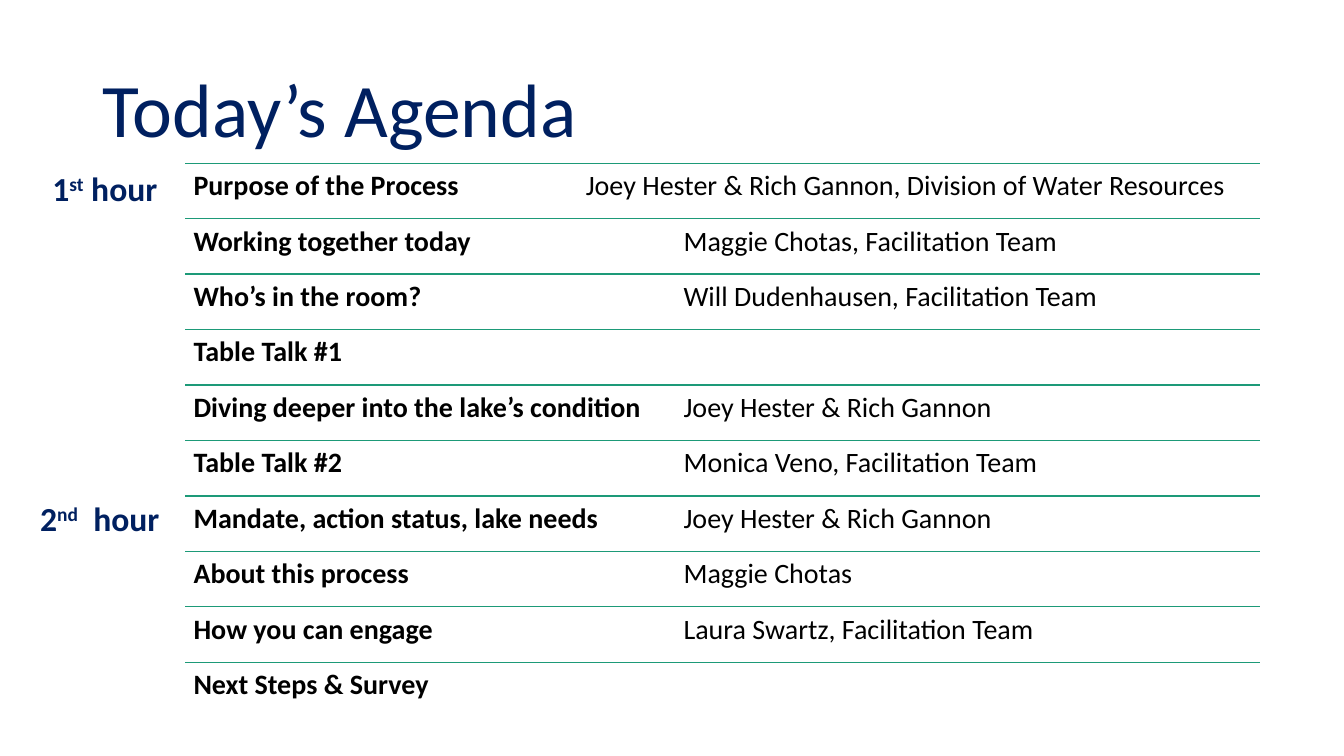
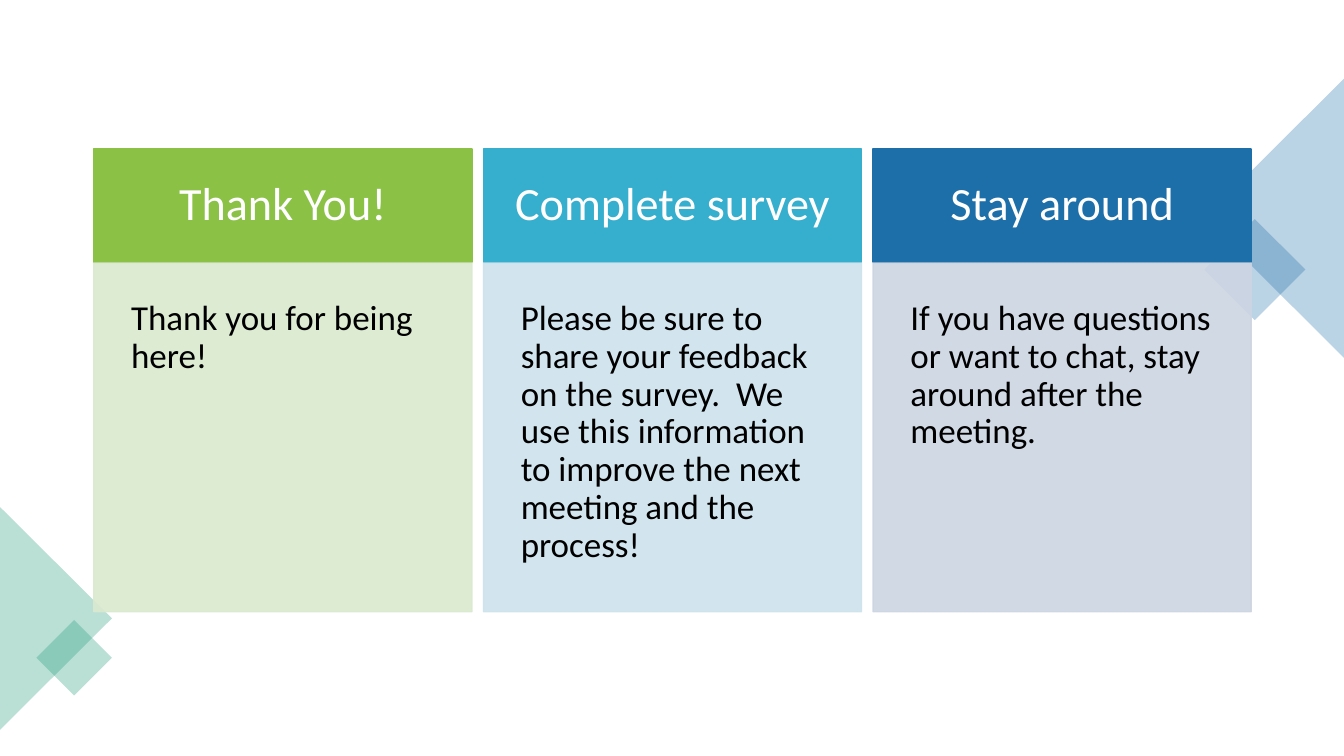
"""Build the agenda and closing slides of a public meeting."""
from pptx import Presentation
from pptx.dml.color import RGBColor
from pptx.enum.shapes import MSO_CONNECTOR, MSO_SHAPE
from pptx.enum.text import MSO_ANCHOR, MSO_AUTO_SIZE, PP_ALIGN
from pptx.oxml.ns import qn
from pptx.util import Inches, Pt
from lxml.etree import SubElement

COLORS = {
    "navy": "002060", "black": "000000", "white": "FFFFFF",
    "teal": "1D9A78", "blue": "1D6FA9", "green": "8BC145", "cyan": "36AFCE",
    "pale green": "DAE9CF", "pale cyan": "CEE3ED", "pale blue": "CDD5E2",
}
FONT = "Calibri"


def write(box, spans, size, color, inset=(0.1, 0.05), spacing=0.9,
          align=PP_ALIGN.LEFT, anchor=MSO_ANCHOR.TOP):
    """Fill a box with one paragraph of (text, bold, baseline) spans."""
    side, top = (Inches(value) for value in inset)
    frame_format = {
        "word_wrap": True, "auto_size": MSO_AUTO_SIZE.NONE, "vertical_anchor": anchor,
        "margin_left": side, "margin_right": side, "margin_top": top, "margin_bottom": top,
    }
    for name, value in frame_format.items():
        setattr(box.text_frame, name, value)
    para = box.text_frame.paragraphs[0]
    para.alignment, para.line_spacing = align, spacing
    for text, bold, baseline in spans:
        span = para.add_run()
        span.text = text
        for name, value in {"name": FONT, "size": Pt(size), "bold": bold}.items():
            setattr(span.font, name, value)
        span.font.color.rgb = RGBColor.from_string(COLORS[color])
        if baseline:
            span.font._element.set("baseline", str(baseline * 1000))
    return para


def add_block(page, kind, place, color, opacity=100, outlined=True, rotation=0):
    """Add a filled shape with an optional matching outline."""
    shape = page.shapes.add_shape(kind, *(Inches(value) for value in place))
    shape.shadow.inherit = False
    shape.rotation = rotation
    shape.fill.solid()
    shape.fill.fore_color.rgb = RGBColor.from_string(COLORS[color])
    if outlined:
        shape.line.color.rgb = RGBColor.from_string(COLORS[color])
        shape.line.width = Pt(1)
    else:
        shape.line.fill.background()
    if opacity < 100:
        for paint in shape._element.spPr.iter(qn("a:srgbClr")):
            SubElement(paint, qn("a:alpha"), val=str(opacity * 1000))
    return shape


deck = Presentation()
deck.slide_width, deck.slide_height = Inches(13.33), Inches(7.5)

page = deck.slides.add_slide(deck.slide_layouts[5])
title = page.shapes.title
title.left, title.top, title.width, title.height = (
    Inches(value) for value in (0.92, 0.4, 11.5, 1.45))
write(title, [("Today’s Agenda", False, 0)], 54, "navy", anchor=MSO_ANCHOR.MIDDLE)

AGENDA = [
    ("Purpose of the Process", "Joey Hester & Rich Gannon, Division of Water Resources"),
    ("Working together today", "Maggie Chotas, Facilitation Team"),
    ("Who’s in the room?", "Will Dudenhausen, Facilitation Team"),
    ("Table Talk #1", ""),
    ("Diving deeper into the lake’s condition", "Joey Hester & Rich Gannon"),
    ("Table Talk #2", "Monica Veno, Facilitation Team"),
    ("Mandate, action status, lake needs", "Joey Hester & Rich Gannon"),
    ("About this process", "Maggie Chotas"),
    ("How you can engage", "Laura Swartz, Facilitation Team"),
    ("Next Steps & Survey", ""),
]
AGENDA_LEFT, AGENDA_TOP, AGENDA_WIDTH, ROW_HEIGHT = 1.84, 1.62, 10.66, 0.55
for row, (topic, speaker) in enumerate(AGENDA):
    left, top, width, height = (Inches(value) for value in (
        AGENDA_LEFT, AGENDA_TOP + row * ROW_HEIGHT, AGENDA_WIDTH, ROW_HEIGHT))
    rule = page.shapes.add_connector(MSO_CONNECTOR.STRAIGHT, left, top, left + width, top)
    rule.line.color.rgb = RGBColor.from_string(COLORS["teal"])
    rule.line.width = Pt(1)
    SubElement(rule._element.spPr, qn("a:effectLst"))
    box = page.shapes.add_textbox(left, top, width, height)
    spans = [(topic, True, 0)]
    if speaker:
        spans.append(("\t" + speaker, False, 0))
    para = write(box, spans, 20, "black", inset=(0.08, 0.08))
    if speaker:
        stop = Inches(3.89 if row == 0 else 4.86)
        tabs = SubElement(para._p.get_or_add_pPr(), qn("a:tabLst"))
        SubElement(tabs, qn("a:tab"), pos=str(stop), algn="l")

HOURS = [
    (0.42, 1.62, 1.31, "1", "st", " hour"),
    (0.3, 4.89, 1.54, "2", "nd", "  hour"),
]
for left, top, width, number, ordinal, word in HOURS:
    box = page.shapes.add_textbox(Inches(left), Inches(top), Inches(width), Inches(0.5))
    write(box, [(number, True, 0), (ordinal, True, 30), (word, True, 0)],
          24, "navy", spacing=1.0)

page = deck.slides.add_slide(deck.slide_layouts[6])
CORNERS = [
    (MSO_SHAPE.RECTANGLE, (12.09, 2.32, 0.71, 0.71), "blue", 45),
    (MSO_SHAPE.ISOSCELES_TRIANGLE, (11.25, 1.47, 2.77, 1.39), "blue", 270),
    (MSO_SHAPE.ISOSCELES_TRIANGLE, (-0.55, 5.58, 2.21, 1.11), "teal", 90),
    (MSO_SHAPE.RECTANGLE, (0.47, 6.26, 0.53, 0.53), "teal", 45),
]
for kind, place, color, rotation in CORNERS:
    add_block(page, kind, place, color, opacity=30, outlined=False, rotation=rotation)

CARDS = [
    ("green", "Thank You!", "Thank you for being here!"),
    ("cyan", "Complete survey",
     "Please be sure to share your feedback on the survey.  We use this information "
     "to improve the next meeting and the process!"),
    ("blue", "Stay around",
     "If you have questions or want to chat, stay around after the meeting."),
]
CARD_LEFT, CARD_TOP, CARD_WIDTH, CARD_STEP = 0.93, 1.48, 3.75, 3.865
HEADER_HEIGHT, BODY_HEIGHT = 1.12, 3.46
for column, (color, heading, message) in enumerate(CARDS):
    left = CARD_LEFT + column * CARD_STEP
    header = add_block(page, MSO_SHAPE.RECTANGLE,
                       (left, CARD_TOP, CARD_WIDTH, HEADER_HEIGHT), color)
    write(header, [(heading, False, 0)], 33, "white", inset=(0.3, 0.3),
          align=PP_ALIGN.CENTER, anchor=MSO_ANCHOR.MIDDLE)
    body = add_block(page, MSO_SHAPE.RECTANGLE,
                     (left, CARD_TOP + HEADER_HEIGHT + 0.01, CARD_WIDTH, BODY_HEIGHT),
                     "pale " + color, opacity=90)
    write(body, [(message, False, 0)], 25, "black", inset=(0.37, 0.37))

deck.save("out.pptx")
